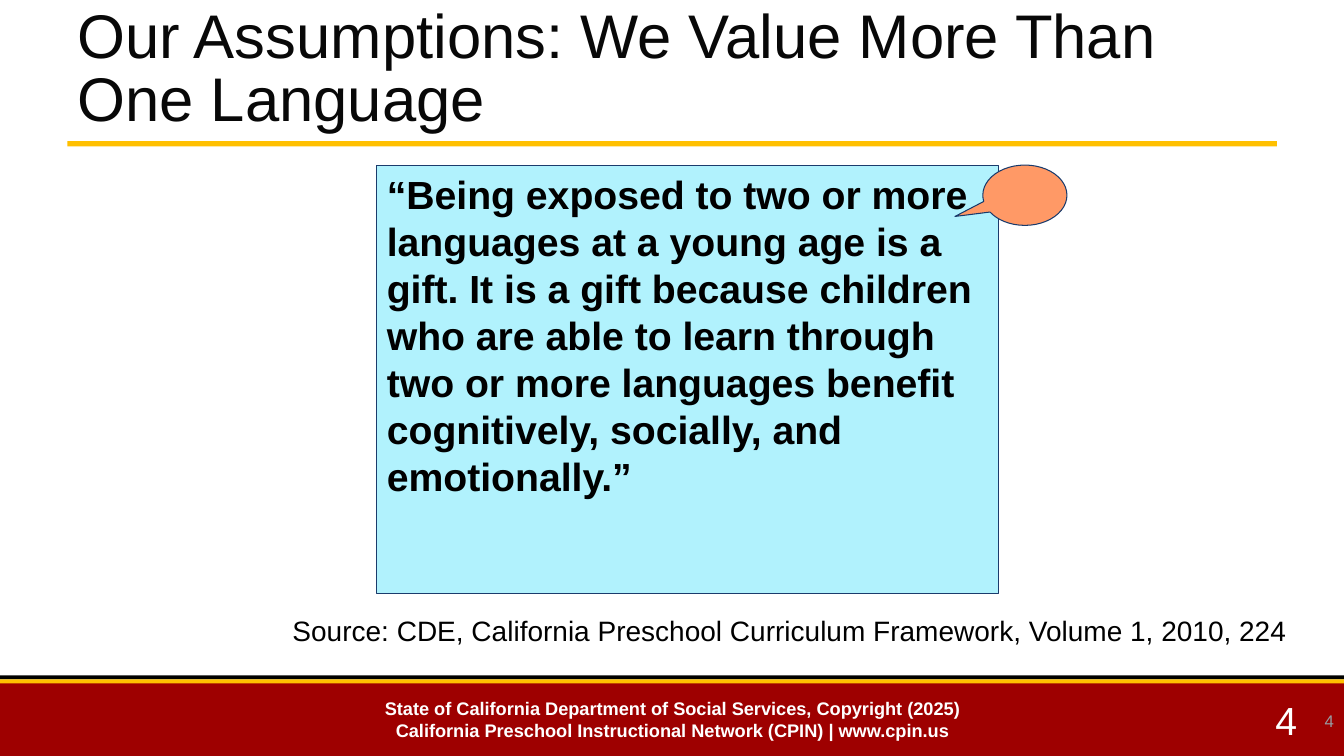
from dataclasses import dataclass

from pptx import Presentation
from pptx.dml.color import RGBColor
from pptx.enum.shapes import MSO_SHAPE
from pptx.enum.text import MSO_ANCHOR, MSO_AUTO_SIZE, PP_ALIGN
from pptx.util import Cm, Pt


@dataclass(frozen=True)
class Theme:
    font: str = "Arial"
    black: str = "000000"
    title_ink: str = "080808"
    white: str = "FFFFFF"
    grey: str = "989DA3"
    gold: str = "FFC000"
    red: str = "9E0000"
    quote_fill: str = "B1F2FD"
    quote_line: str = "1B3C6C"
    callout_fill: str = "FF9966"
    callout_line: str = "183A6C"
    title_size: int = 44
    quote_size: int = 28
    number_size: int = 28
    source_size: int = 20
    footer_size: int = 13
    small_size: int = 12


THEME = Theme()
PAGE_WIDTH, PAGE_HEIGHT = 33.87, 19.05
RULE_HEIGHT = 0.13


def place(left, top, width, height):
    return Cm(left), Cm(top), Cm(width), Cm(height)


def add_block(page, kind, box, fill, line=None):
    shape = page.shapes.add_shape(kind, *place(*box))
    shape.shadow.inherit = False
    shape.fill.solid()
    shape.fill.fore_color.rgb = RGBColor.from_string(fill)
    if line:
        shape.line.color.rgb = RGBColor.from_string(line)
        shape.line.width = Pt(0.75)
    else:
        shape.line.fill.background()
    return shape


def write(shape, lines, size, color, align=PP_ALIGN.LEFT, anchor=MSO_ANCHOR.TOP,
          bold=False, spacing=1.0):
    frame = shape.text_frame
    frame.word_wrap = True
    frame.auto_size = MSO_AUTO_SIZE.NONE
    frame.vertical_anchor = anchor
    for index, line in enumerate(lines):
        para = frame.add_paragraph() if index else frame.paragraphs[0]
        para.alignment = align
        para.line_spacing = spacing
        para.space_before = Pt(0)
        span = para.add_run()
        span.text = line
        span.font.name = THEME.font
        span.font.size = Pt(size)
        span.font.bold = bold
        span.font.color.rgb = RGBColor.from_string(color)


def add_text(page, box, lines, size, color, **style):
    write(page.shapes.add_textbox(*place(*box)), lines, size, color, **style)


def add_heading(page, box, text):
    left, top, width, height = box
    title = page.shapes.title
    title.left, title.top, title.width, title.height = place(*box)
    write(title, [text], THEME.title_size, THEME.title_ink,
          anchor=MSO_ANCHOR.BOTTOM, spacing=0.85)
    rule = (left, top + height + 0.06, width, RULE_HEIGHT)
    add_block(page, MSO_SHAPE.RECTANGLE, rule, THEME.gold)


def add_quote(page, box, text):
    left, top, width, height = box
    panel = add_block(page, MSO_SHAPE.RECTANGLE, box, THEME.quote_fill, THEME.quote_line)
    write(panel, [text], THEME.quote_size, THEME.black, bold=True)
    bubble = (left + width - 0.4, top, 2.12, 1.52)
    callout = add_block(page, MSO_SHAPE.OVAL_CALLOUT, bubble,
                        THEME.callout_fill, THEME.callout_line)
    callout.adjustments[0] = -0.832
    callout.adjustments[1] = 0.352


def add_footer(page, box, lines, number):
    left, top, width, height = box
    bands = [(0, 0.1, THEME.black), (0.1, RULE_HEIGHT, THEME.gold),
             (0.2, height - 0.2, THEME.red)]
    for offset, depth, color in bands:
        band = (left, top + offset, width, depth)
        add_block(page, MSO_SHAPE.RECTANGLE, band, color)
    text_top, text_height = top + 0.2, height - 0.2
    add_text(page, (left + 4, text_top, 25.88, text_height), lines,
             THEME.footer_size, THEME.white, align=PP_ALIGN.CENTER,
             anchor=MSO_ANCHOR.MIDDLE, bold=True)
    add_text(page, (left + width - 2.91, text_top, 2.91, text_height), [number],
             THEME.number_size, THEME.white, align=PP_ALIGN.CENTER,
             anchor=MSO_ANCHOR.MIDDLE)
    add_text(page, (left + width - 7.62, top + 0.63, 7.62, 1.02), [number],
             THEME.small_size, THEME.grey, align=PP_ALIGN.RIGHT,
             anchor=MSO_ANCHOR.MIDDLE)


def main():
    deck = Presentation()
    deck.slide_width, deck.slide_height = Cm(PAGE_WIDTH), Cm(PAGE_HEIGHT)
    page = deck.slides.add_slide(deck.slide_layouts[5])
    add_heading(page, (1.7, 0.76, 30.48, 2.74),
                "Our Assumptions: We Value More Than One Language")
    add_quote(page, (9.5, 4.16, 15.67, 10.8),
              "“Being exposed to two or more languages at a young age is a gift. "
              "It is a gift because children who are able to learn through two or more "
              "languages benefit cognitively, socially, and emotionally.”")
    add_text(page, (5.46, 15.44, 27.23, 1.02),
             ["Source: CDE, California Preschool Curriculum Framework, Volume 1, 2010, 224"],
             THEME.source_size, THEME.black, align=PP_ALIGN.RIGHT, spacing=0.9)
    add_footer(page, (0, 17.02, PAGE_WIDTH, PAGE_HEIGHT - 17.02),
               ["State of California Department of Social Services, Copyright (2025)",
                "California Preschool Instructional Network (CPIN) | www.cpin.us"], "4")
    deck.save("out.pptx")


if __name__ == "__main__":
    main()
